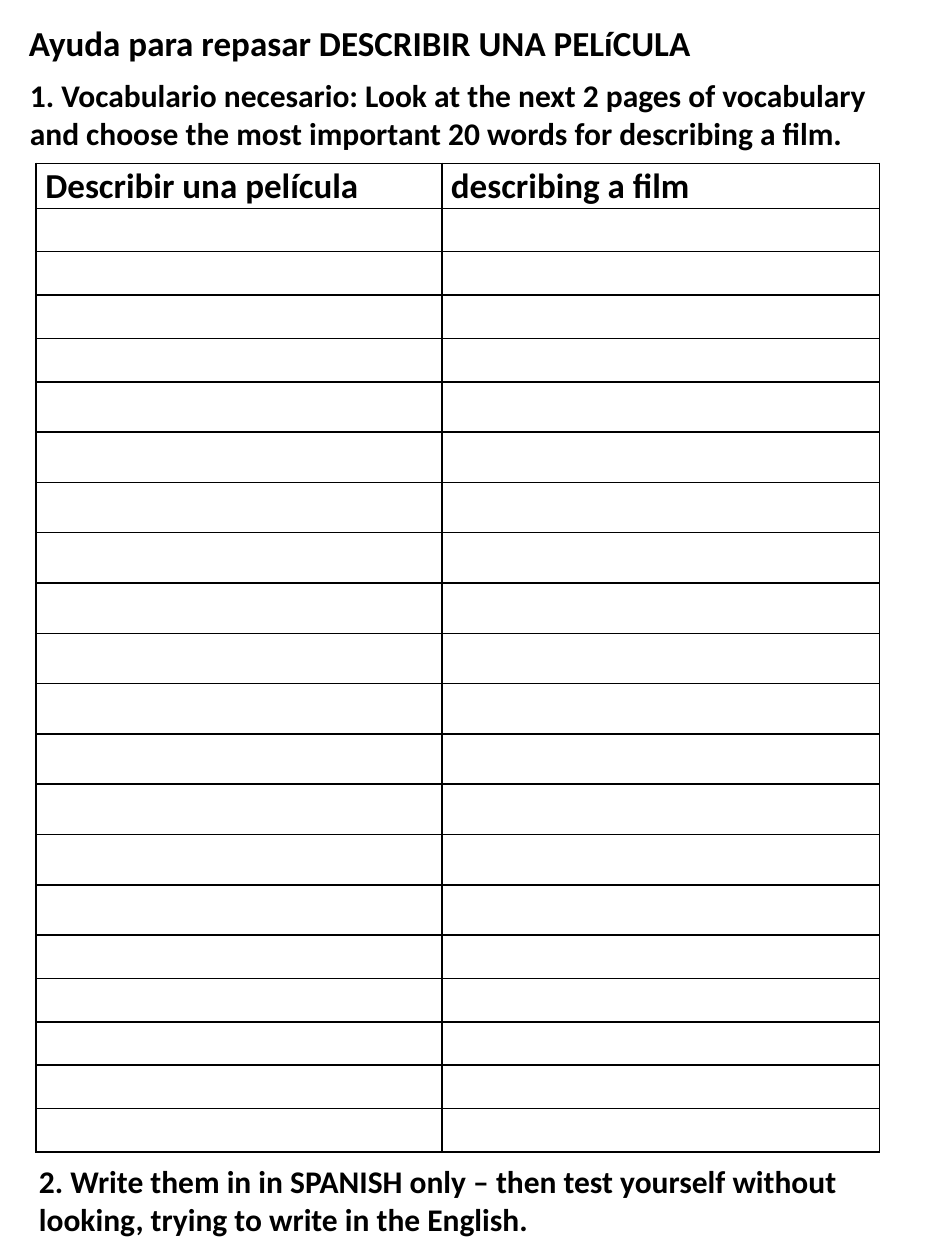
from lxml.etree import SubElement
from pptx import Presentation
from pptx.dml.color import RGBColor
from pptx.enum.text import MSO_ANCHOR
from pptx.oxml.ns import qn
from pptx.util import Pt

FONT = "Calibri"
BLACK = "000000"
# text, left, top, width, height, font size
TEXTS = [
    ("Ayuda para repasar DESCRIBIR UNA PELíCULA", 9.4, 8.6, 505, 31.5, 20),
    ("1. Vocabulario necesario: Look at the next 2 pages of vocabulary "
     "and choose the most important 20 words for describing a film.",
     10, 40, 504, 51, 18),
    ("2. Write them in in SPANISH only – then test yourself without "
     "looking, trying to write in the English.", 15.2, 660.5, 504, 51, 18),
]
HEADERS = ["Describir una película", "describing a film"]
COLUMN_WIDTHS = [231.8, 250]
HEADER_HEIGHT, SHORT_ROW, TALL_ROW = 25.7, 24.8, 28.75
ROW_HEIGHTS = [HEADER_HEIGHT] + [SHORT_ROW] * 4 + [TALL_ROW] * 11 + [SHORT_ROW] * 5
TABLE_LEFT, TABLE_TOP = 20.7, 93.4


def style(paragraph, size):
    paragraph.font.name = FONT
    paragraph.font.size = Pt(size)
    paragraph.font.bold = True
    paragraph.font.color.rgb = RGBColor.from_string(BLACK)


def add_borders(cell, color, width):
    properties = cell._tc.get_or_add_tcPr()
    for side in ("a:lnL", "a:lnR", "a:lnT", "a:lnB"):
        line = SubElement(properties, qn(side), w=str(Pt(width)))
        fill = SubElement(line, qn("a:solidFill"))
        SubElement(fill, qn("a:srgbClr"), val=color)


def add_text(slide, text, left, top, width, height, size):
    box = slide.shapes.add_textbox(Pt(left), Pt(top), Pt(width), Pt(height))
    box.text_frame.word_wrap = True
    paragraph = box.text_frame.paragraphs[0]
    paragraph.text = text
    style(paragraph, size)


def add_vocabulary_table(slide):
    table = slide.shapes.add_table(
        len(ROW_HEIGHTS), len(COLUMN_WIDTHS), Pt(TABLE_LEFT), Pt(TABLE_TOP),
        Pt(sum(COLUMN_WIDTHS)), Pt(sum(ROW_HEIGHTS))).table
    table.horz_banding = False
    for column, width in zip(table.columns, COLUMN_WIDTHS):
        column.width = Pt(width)
    for row, height in zip(table.rows, ROW_HEIGHTS):
        row.height = Pt(height)
    for cell in table.iter_cells():
        add_borders(cell, BLACK, 1)
        cell.fill.background()
        cell.vertical_anchor = MSO_ANCHOR.MIDDLE
        cell.margin_left = Pt(5.2)
        cell.margin_right = cell.margin_top = Pt(0.7)
        cell.margin_bottom = 0
    for cell, header in zip(table.rows[0].cells, HEADERS):
        paragraph = cell.text_frame.paragraphs[0]
        paragraph.text = header
        style(paragraph, 20)


presentation = Presentation()
presentation.slide_width, presentation.slide_height = Pt(540), Pt(720)
slide = presentation.slides.add_slide(presentation.slide_layouts[6])
for text in TEXTS:
    add_text(slide, *text)
add_vocabulary_table(slide)
presentation.save("out.pptx")
